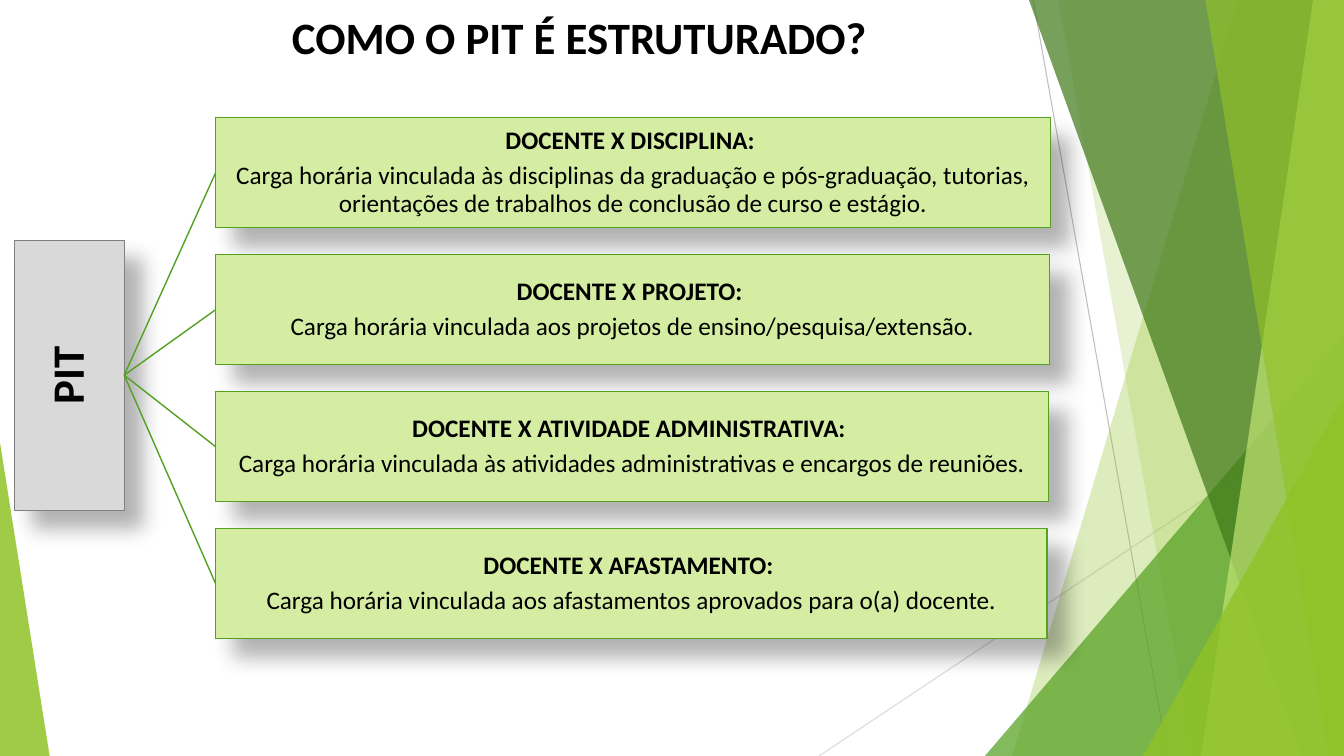
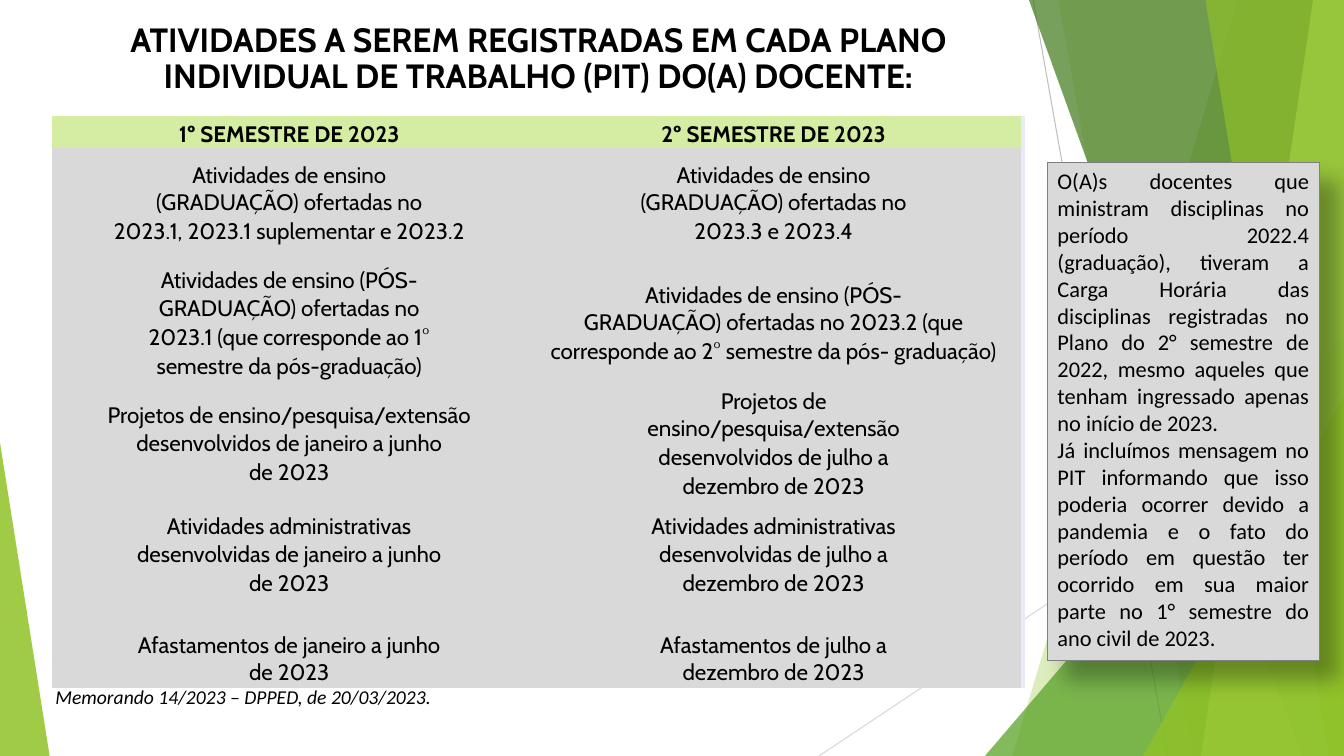
from lxml import etree
from pptx import Presentation
from pptx import util as u
from pptx.dml.color import RGBColor
from pptx.enum import shapes, text
from pptx.oxml.ns import qn

Pt = u.Pt
W, H = 960, 540
BLACK, GREY, GREY_LINE = "000000", "D9D9D9", "808080"
LIME, GREEN, DARK_GREEN, PALE_LIME = "90C226", "54A021", "3F7819", "C0E474"
LIGHT_GREEN, LAVENDER = "D5EDA2", "E8EBF5"
CENTER, JUSTIFY = text.PP_ALIGN.CENTER, text.PP_ALIGN.JUSTIFY
TOP, MIDDLE, BOTTOM = (text.MSO_ANCHOR.TOP, text.MSO_ANCHOR.MIDDLE,
                       text.MSO_ANCHOR.BOTTOM)

# Content
STRUCTURE_TITLE = "COMO O PIT É ESTRUTURADO?"
BRANCHES = [
    ("DOCENTE X DISCIPLINA: ",
     "Carga horária vinculada às disciplinas da graduação e pós-graduação, tutorias, "
     "orientações de trabalhos de conclusão de curso e estágio."),
    ("DOCENTE X PROJETO: ",
     "Carga horária vinculada aos projetos de ensino/pesquisa/extensão."),
    ("DOCENTE X ATIVIDADE ADMINISTRATIVA: ",
     "Carga horária vinculada às atividades administrativas e encargos de reuniões."),
    ("DOCENTE X AFASTAMENTO: ",
     "Carga horária vinculada aos afastamentos aprovados para o(a) docente."),
]
ACTIVITIES_TITLE = ("ATIVIDADES A SEREM REGISTRADAS EM CADA PLANO "
                    "INDIVIDUAL DE TRABALHO (PIT) DO(A) DOCENTE:")
# Heights of the rows an entry spans, then the lines of each semester's cell
ACTIVITIES = [
    ([22.5], ["1º SEMESTRE DE 2023"], ["2º SEMESTRE DE 2023"]),
    ([62, 20.5], ["Atividades de ensino", "(GRADUAÇÃO) ofertadas no",
                  "2023.1, 2023.1 suplementar e 2023.2"],
     ["Atividades de ensino", "(GRADUAÇÃO) ofertadas no", "2023.3 e 2023.4"]),
    ([89.3], ["Atividades de ensino (PÓS-", "GRADUAÇÃO) ofertadas no",
              "2023.1 (que corresponde ao 1°", "semestre da pós-graduação)"],
     ["Atividades de ensino (PÓS-",
      "GRADUAÇÃO) ofertadas no 2023.2 (que corresponde ao 2° semestre da pós- graduação)"]),
    ([82.8], ["Projetos de ensino/pesquisa/extensão",
              "desenvolvidos de janeiro a junho", "de 2023"],
     ["Projetos de", "ensino/pesquisa/extensão", "desenvolvidos de julho a",
      "dezembro de 2023"]),
    ([75.6], ["Atividades administrativas", "desenvolvidas de janeiro a junho", "de 2023"],
     ["Atividades administrativas", "desenvolvidas de julho a", "dezembro de 2023"]),
    ([16.5, 38.8], ["Afastamentos de janeiro a junho", "de 2023"],
     ["Afastamentos de julho a", "dezembro de 2023"]),
]
COLUMNS = [339, 353, 3]
NOTICE = [
    "O(A)s docentes que ministram disciplinas no período 2022.4 (graduação), tiveram a "
    "Carga Horária das disciplinas registradas no Plano do 2° semestre de 2022, mesmo "
    "aqueles que tenham ingressado apenas no início de 2023.",
    "Já incluímos mensagem no PIT informando que isso poderia ocorrer devido a pandemia "
    "e o fato do período em questão ter ocorrido em sua maior parte no 1° semestre do "
    "ano civil de 2023.",
]
MEMO = "Memorando 14/2023 – DPPED, de 20/03/2023."

# Background: bands are (top x, bottom x), reaching the right edge;
# triangles are (left, top, width, apex), standing on the bottom edge
RAYS = [((738, 0), (834, H), "BFBFBF"), ((W, 290), (585, H), "D9D9D9")]
FACETS = [
    ((884, 723), LIME, 30),
    ((756, 852), LIME, 20),
    ((703.5, 240, 256.5, 1), GREEN, 72),
    ((735, 930), DARK_GREEN, 70),
    ((938, 858), PALE_LIME, 70),
    ((861, 949), LIME, 65),
    ((816.5, 283, 143.5, 1), LIME, 80),
    ((0, 316, 35.5, 0), LIME, 85),
]


def rgb(color):
    return RGBColor.from_string(color)


def write(tf, lines, size=16, font="Calibri", bold=False, bold_first=False,
          italic=False, align=None, anchor=MIDDLE, spacing=None,
          first_spacing=None, gap=0):
    tf.word_wrap = True
    tf.vertical_anchor = anchor
    for i, line in enumerate(lines):
        p = tf.add_paragraph() if i else tf.paragraphs[0]
        p.alignment = align
        p.line_spacing = first_spacing if first_spacing and i == 0 else spacing
        p.space_before = Pt(gap if i else 0)
        r = p.add_run()
        r.text = line
        f = r.font
        f.name, f.size, f.italic = font, Pt(size), italic
        f.bold = bold or (bold_first and i == 0)
        f.color.rgb = rgb(BLACK)


def set_margins(tf, margin):
    tf.margin_left = tf.margin_right = tf.margin_top = tf.margin_bottom = Pt(margin)


def add_text(s, box, lines, **fmt):
    tf = s.shapes.add_textbox(*map(Pt, box)).text_frame
    write(tf, lines, **fmt)
    return tf


def add_line(s, start, end, color, width):
    line = s.shapes.add_connector(shapes.MSO_CONNECTOR.STRAIGHT, *map(Pt, start + end))
    line.line.color.rgb, line.line.width = rgb(color), Pt(width)
    etree.SubElement(line._element.spPr, qn("a:effectLst"))


def add_facet(s, geometry, color, opacity):
    if len(geometry) == 2:
        top_x, bottom_x = geometry
        outline = s.shapes.build_freeform(Pt(top_x), 0, scale=1.0)
        outline.add_line_segments([(Pt(x), Pt(y)) for x, y in
                                   [(W, 0), (W, H), (bottom_x, H)]])
        sp = outline.convert_to_shape()
    else:
        left, top, width, apex = geometry
        sp = s.shapes.add_shape(shapes.MSO_SHAPE.ISOSCELES_TRIANGLE,
                                Pt(left), Pt(top), Pt(width), Pt(H - top))
        sp.adjustments[0] = apex
    sp.shadow.inherit = False
    sp.fill.solid()
    sp.fill.fore_color.rgb = rgb(color)
    sp.line.fill.background()
    tint = sp._element.spPr.find(qn("a:solidFill"))[0]
    etree.SubElement(tint, qn("a:alpha"), val=str(opacity * 1000))


def add_card(s, box, fill, line, lines, margin=None, **fmt):
    """Rectangle with a thin outline and a soft shadow to the lower right."""
    sp = s.shapes.add_shape(shapes.MSO_SHAPE.RECTANGLE, *map(Pt, box))
    sp.fill.solid()
    sp.fill.fore_color.rgb = rgb(fill)
    sp.line.color.rgb, sp.line.width = rgb(line), Pt(0.75)
    sp.shadow.inherit = False
    effects = sp._element.spPr.find(qn("a:effectLst"))
    shadow = etree.SubElement(effects, qn("a:outerShdw"), blurRad=str(Pt(15)),
                              dist=str(Pt(18)), dir="2700000", algn="tl",
                              rotWithShape="0")
    tint = etree.SubElement(shadow, qn("a:srgbClr"), val=BLACK)
    etree.SubElement(tint, qn("a:alpha"), val="30000")
    if margin is not None:
        set_margins(sp.text_frame, margin)
    write(sp.text_frame, lines, **fmt)
    return sp


def fill_cell(cell, color):
    set_margins(cell, 0)
    cell.fill.solid()
    cell.fill.fore_color.rgb = rgb(color)
    # Small text size, so that an empty cell does not stretch its row
    etree.SubElement(cell.text_frame.paragraphs[0]._p, qn("a:endParaRPr"), sz="800")


def add_slide(prs, title, box, **fmt):
    s = prs.slides.add_slide(prs.slide_layouts[6])
    for start, end, color in RAYS:
        add_line(s, start, end, color, 0.75)
    for facet in FACETS:
        add_facet(s, *facet)
    add_text(s, box, [title], bold=True, align=CENTER, spacing=0.9, **fmt)
    return s


def structure_slide(prs):
    s = add_slide(prs, STRUCTURE_TITLE, (0, 8, 828, 41), size=32)
    # Root, turned to read upwards
    root_x, root_y, length, thick = 49.5, 268, 193, 78.5
    root = add_card(s, (root_x - length / 2, root_y - thick / 2, length, thick),
                    GREY, GREY_LINE, ["PIT"], margin=1.5, size=32, bold=True,
                    align=CENTER, spacing=0.9)
    root.rotation = 270
    # Branches
    left, top, pitch, height = 154, 84.2, 97.8, 78.5
    for i, branch in enumerate(BRANCHES):
        y = top + i * pitch
        add_card(s, (left, y, 596.3 - 0.8 * i, height), LIGHT_GREEN, GREEN, branch,
                 margin=0.7, size=18, bold_first=True, align=CENTER,
                 spacing=0.9, gap=5.6)
        add_line(s, (left, y + height / 2), (root_x + thick / 2, root_y), GREEN, 1)


def activities_slide(prs):
    s = add_slide(prs, ACTIVITIES_TITLE, (37, 18, 695, 49), size=24, font="Cabin")
    # Activities by semester
    heights = [height for entry in ACTIVITIES for height in entry[0]]
    frame = s.shapes.add_table(len(heights), len(COLUMNS), Pt(37.1), Pt(83.2),
                               Pt(sum(COLUMNS)), Pt(sum(heights)))
    table = frame.table
    table.horz_banding = table.first_row = False
    style = table._tbl.tblPr.find(qn("a:tableStyleId"))
    style.text = "{2D5ABB26-0587-4C30-8999-92F81FD0307C}"
    for column, width in zip(table.columns, COLUMNS):
        column.width = Pt(width)
    for i, height in enumerate(heights):
        table.rows[i].height = Pt(height)
        for j in range(len(COLUMNS)):
            edge = j == len(COLUMNS) - 1
            fill_cell(table.cell(i, j),
                      LAVENDER if edge else GREY if i else LIGHT_GREEN)
    row = 0
    for spans, *semesters in ACTIVITIES:
        header, end = row == 0, row + len(spans)
        for j, lines in enumerate(semesters):
            cell = table.cell(row, j)
            if len(spans) > 1:
                cell.merge(table.cell(end - 1, j))
            write(cell.text_frame, lines, font="Cabin", bold=header, align=CENTER,
                  spacing=1.07, first_spacing=None if header else 0.78)
            cell.vertical_anchor = BOTTOM if header else MIDDLE
            cell.margin_top = Pt(18 if end == len(heights) else 0)
        row = end
    # Notice and source
    notice = add_card(s, (748.3, 116, 194, 356), GREY, GREY_LINE, NOTICE,
                      align=JUSTIFY, anchor=TOP)
    memo = add_text(s, (32.4, 485.5, 555, 24.5), [MEMO], size=14, italic=True, anchor=TOP)
    for tf in (notice.text_frame, memo):
        tf.auto_size = text.MSO_AUTO_SIZE.SHAPE_TO_FIT_TEXT


def main():
    prs = Presentation()
    prs.slide_width, prs.slide_height = Pt(W), Pt(H)
    structure_slide(prs)
    activities_slide(prs)
    prs.save("out.pptx")


if __name__ == "__main__":
    main()
